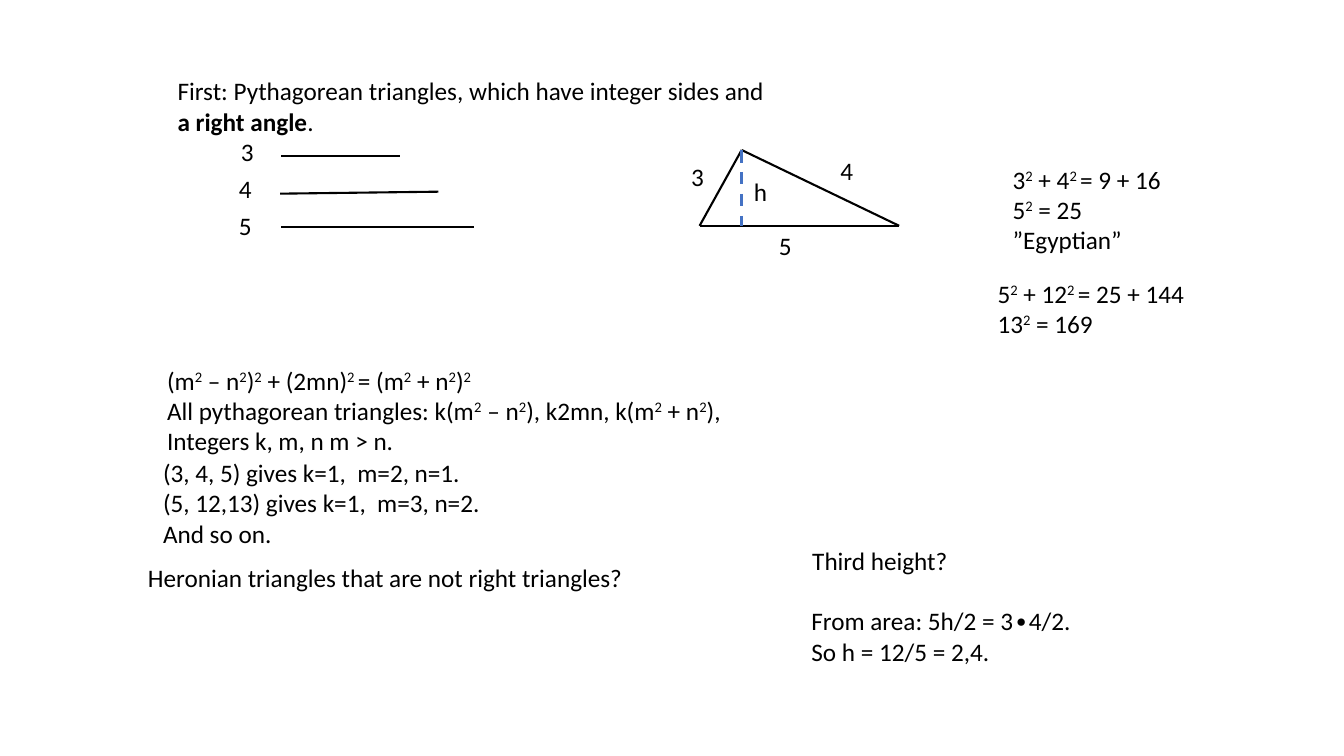
import pptx
import pptx.util
import pptx.enum.dml
import pptx.enum.shapes
import pptx.enum.text
import pptx.dml.color
import pptx.oxml.ns
import lxml.etree

Cm = pptx.util.Cm
HUES = {"ink": "000000", "blue": "4472C4"}
FONT = "Calibri"

HEAD = (4.22, 1.78, 18.14, [
    "First: Pythagorean triangles, which have integer sides and",
    "|a right angle|.",
])
NOTES = [
    (25.27, 4.01, 5.0, ["3|2| + 4|2 |= 9 + 16", "5|2| = 25", "”Egyptian”"]),
    (24.89, 6.88, 5.8, ["5|2| + 12|2 |= 25 + 144", "13|2| = 169"]),
    (3.96, 9.07, 14.73, [
        "(m|2| – n|2|)|2| + (2mn)|2 |= (m|2| + n|2|)|2|",
        "All pythagorean triangles: k(m|2| – n|2|), k2mn, k(m|2| + n|2|),",
        "Integers k, m, n m > n.",
    ]),
    (3.86, 11.4, 11.48, [
        "(3, 4, 5) gives k=1,  m=2, n=1.",
        "(5, 12,13) gives k=1,  m=3, n=2.",
        "And so on.",
    ]),
    (3.48, 14.05, 15.21, ["Heronian triangles that are not right triangles?"]),
    (20.22, 13.61, 5.05, ["Third height?"]),
    (20.2, 15.14, 9.14, ["From area: 5h/2 = 3∙4/2.", "So h = 12/5 = 2,4."]),
]
MARKS = [
    ("3", 5.82, 3.3), ("4", 5.77, 4.24), ("5", 5.77, 5.18),
    ("3", 17.17, 3.94), ("4", 20.93, 3.78), ("5", 19.38, 5.69),
    ("h", 18.75, 4.32),
]
RODS = [
    ((7.09, 3.94), (10.08, 3.94)),
    ((7.06, 4.88), (11.05, 4.83)),
    ((7.09, 5.72), (11.94, 5.72)),
]
LEFT, TOP, RIGHT = (17.63, 5.69), (18.69, 3.78), (22.66, 5.69)
FOOT = (TOP[0], LEFT[1])
SIDES = [(LEFT, TOP), (TOP, RIGHT), (LEFT, RIGHT)]


def tint(name):
    return pptx.dml.color.RGBColor.from_string(HUES[name])


def place(box, left, top, width, count):
    box.left, box.top, box.width = Cm(left), Cm(top), Cm(width)
    box.height = Cm(0.25 + 0.77 * count)


def write(frame, lines, bold=False):
    frame.word_wrap = True
    frame.auto_size = pptx.enum.text.MSO_AUTO_SIZE.NONE
    frame.vertical_anchor = pptx.enum.text.MSO_ANCHOR.TOP
    frame.text = "\n".join(line.split("|")[0] for line in lines)
    for para, line in zip(frame.paragraphs, lines):
        para.alignment = pptx.enum.text.PP_ALIGN.LEFT
        for part in line.split("|")[1:]:
            para.add_run().text = part
        odd = 1 if line.startswith("|") else 0
        for rank, run in enumerate(para.runs):
            font = run.font
            font.name, font.size = FONT, pptx.util.Pt(18)
            font.color.rgb = tint("ink")
            marked = (rank + odd) % 2 == 1
            if bold:
                font.bold = marked
            elif marked:
                run._r.get_or_add_rPr().set("baseline", "30000")


def note(slide, left, top, width, lines):
    box = slide.shapes.add_textbox(0, 0, 0, 0)
    place(box, left, top, width, len(lines))
    write(box.text_frame, lines)


def draw(slide, start, end, hue="ink", width=1.5):
    line = slide.shapes.add_connector(
        pptx.enum.shapes.MSO_CONNECTOR.STRAIGHT,
        *(Cm(v) for v in start + end))
    line.line.color.rgb = tint(hue)
    line.line.width = pptx.util.Pt(width)
    lxml.etree.SubElement(line._element.spPr, pptx.oxml.ns.qn("a:effectLst"))
    return line


def main():
    deck = pptx.Presentation()
    deck.slide_width, deck.slide_height = Cm(33.87), Cm(19.05)
    slide = deck.slides.add_slide(deck.slide_layouts[5])
    left, top, width, lines = HEAD
    title = slide.shapes.title
    place(title, left, top, width, len(lines))
    write(title.text_frame, lines, bold=True)
    for item in NOTES:
        note(slide, *item)
    for text, left, top in MARKS:
        note(slide, left, top, 0.84, [text])
    for start, end in RODS + SIDES:
        draw(slide, start, end)
    rise = draw(slide, TOP, FOOT, "blue", 2.25)
    rise.line.dash_style = pptx.enum.dml.MSO_LINE.DASH
    deck.save("out.pptx")


if __name__ == "__main__":
    main()
